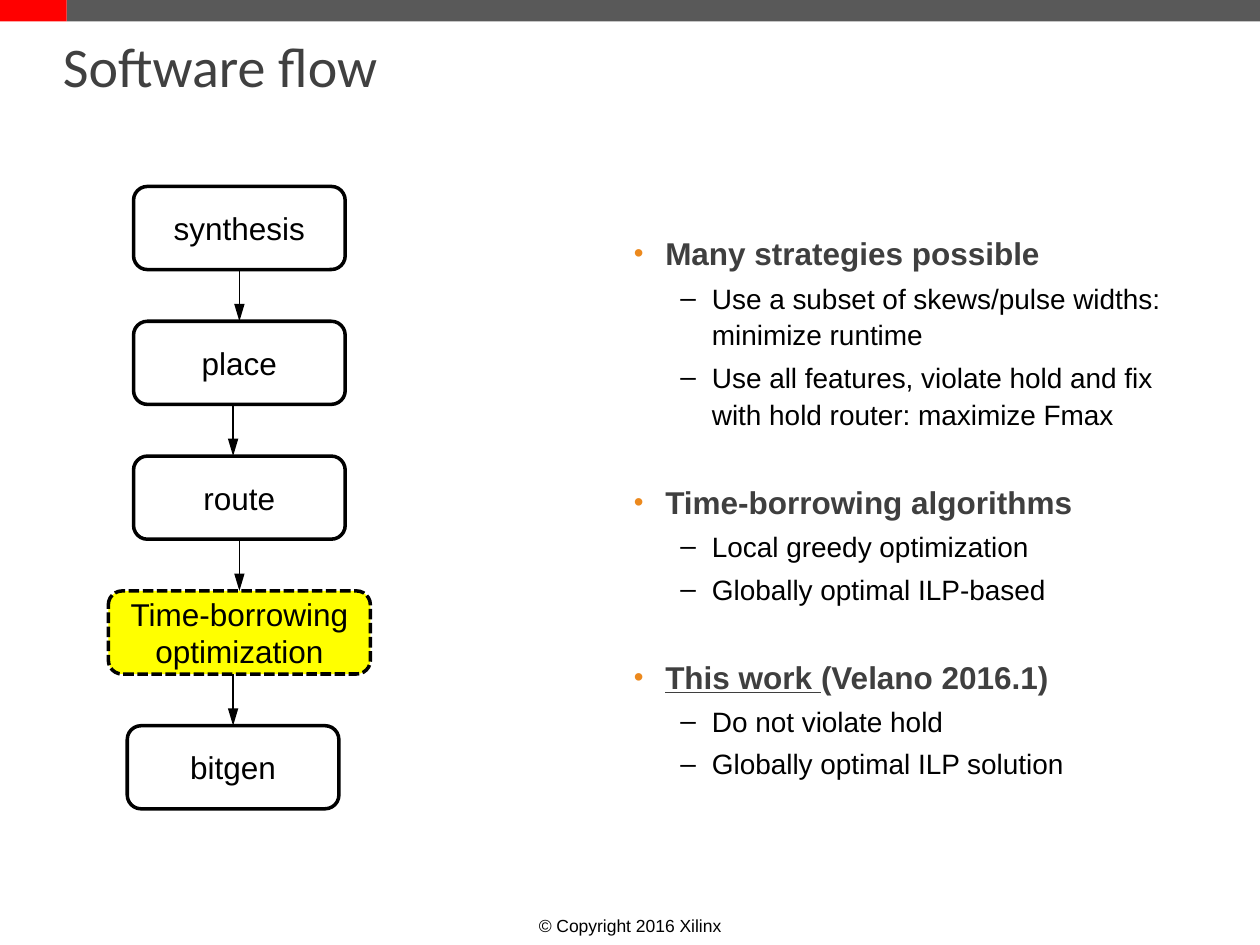
from itertools import pairwise

from lxml import etree
from pptx import Presentation, util as u
from pptx.dml.color import RGBColor
from pptx.enum import dml, shapes, text
from pptx.oxml.ns import qn


class Theme:
    black, white, red = "000000", "FFFFFF", "FF0000"
    bar, title, head = "595959", "404040", "3F3F3F"
    mark, focus = "EC891D", "FFFF00"
    sans, serif = "Arial", "Calibri"
    big, mid, item, small = 32, 18, 16, 10


def rgb(code):
    return RGBColor.from_string(code)


def node(parent, tag, **attrs):
    return etree.SubElement(parent, qn(tag), attrs)


class Deck:
    def __init__(self, theme):
        self.theme = theme
        self.prs = Presentation()
        self.prs.slide_width, self.prs.slide_height = u.Inches(10), u.Inches(7.5)
        self.slide = self.prs.slides.add_slide(self.prs.slide_layouts[6])

    def run(self, para, words, size, color, font=None, bold=False, under=False):
        run = para.add_run()
        run.text = words
        face = run.font
        face.name, face.size = font or self.theme.sans, u.Pt(size)
        face.bold, face.underline = bold, under
        face.color.rgb = rgb(color)

    def frame(self, at, left=0.1, top=0.05):
        box = self.slide.shapes.add_textbox(*map(u.Inches, at))
        frame = box.text_frame
        frame.word_wrap = True
        frame.margin_left, frame.margin_top = u.Inches(left), u.Inches(top)
        return frame

    def shape(self, kind, at, fill):
        shape = self.slide.shapes.add_shape(kind, *map(u.Inches, at))
        shape.shadow.inherit = False
        shape.fill.solid()
        shape.fill.fore_color.rgb = rgb(fill)
        return shape

    def bar(self, at, fill):
        self.shape(shapes.MSO_SHAPE.RECTANGLE, at, fill).line.fill.background()

    def step(self, words, at, focus):
        t = self.theme
        box = self.shape(shapes.MSO_SHAPE.ROUNDED_RECTANGLE, at,
                         t.focus if focus else t.white)
        box.line.color.rgb = rgb(t.black)
        box.line.width = u.Pt(2)
        if focus:
            box.line.dash_style = dml.MSO_LINE.SQUARE_DOT
        frame = box.text_frame
        frame.word_wrap = True
        frame.vertical_anchor = text.MSO_ANCHOR.MIDDLE
        para = frame.paragraphs[0]
        para.alignment = text.PP_ALIGN.CENTER
        self.run(para, words, t.mid, t.black)
        return box

    def arrow(self, top, end, x):
        """Drop an arrow at x, joined wherever x is the middle of a side."""
        x = u.Inches(x)
        line = self.slide.shapes.add_connector(
            shapes.MSO_CONNECTOR.STRAIGHT, x, top.top + top.height, x, end.top)
        line.line.color.rgb = rgb(self.theme.black)
        line.line.width = u.Pt(1)
        for box, site, join in ((top, 2, line.begin_connect),
                                (end, 0, line.end_connect)):
            if abs(box.left + box.width // 2 - x) < u.Inches(0.01):
                join(box, site)
        props = line.line._get_or_add_ln()
        node(props, "a:tailEnd", type="triangle", w="med", len="lg")
        node(line._element.spPr, "a:effectLst")

    def bullet(self, para, sign, color, indent, scale=100):
        props = para._p.get_or_add_pPr()
        props.set("marL", str(u.Inches(indent)))
        props.set("indent", str(u.Inches(-0.25)))
        node(node(props, "a:buClr"), "a:srgbClr", val=color)
        node(props, "a:buSzPct", val=str(scale * 1000))
        node(props, "a:buFont", typeface=self.theme.sans)
        node(props, "a:buChar", char=sign)
        para.line_spacing = 1.1

    def points(self, at, groups):
        t = self.theme
        frame = self.frame(at, left=0, top=0.08)
        for i, (heads, items) in enumerate(groups):
            para = frame.add_paragraph() if i else frame.paragraphs[0]
            self.bullet(para, "•", t.mark, 0.25, 88)
            if i:
                para.space_before = u.Pt(27.5)
            for words, under in heads:
                self.run(para, words, t.mid, t.head, bold=True, under=under)
            for lines in items:
                para = frame.add_paragraph()
                para.level = 1
                self.bullet(para, "–", t.black, 0.62)
                para.space_before = u.Pt(t.item * 0.2)
                for j, words in enumerate(lines):
                    if j:
                        para.add_line_break()
                    self.run(para, words, t.item, t.black)


def main():
    t = Theme
    deck = Deck(t)
    deck.bar((0.53, 0, 9.47, 0.17), t.bar)
    deck.bar((0, 0, 0.53, 0.17), t.red)

    foot = deck.frame((0, 7.21, 10, 0.32)).paragraphs[0]
    foot.alignment = text.PP_ALIGN.CENTER
    deck.run(foot, "© Copyright 2016 Xilinx", t.small, t.black)

    title = deck.frame((0.5, 0.23, 9, 0.58), left=0).paragraphs[0]
    title.line_spacing = 0.98
    deck.run(title, "Software flow", t.big, t.title, t.serif)

    deck.points((5.03, 1.75, 4.49, 4.95), [
        ([("Many strategies possible", False)],
         [["Use a subset of skews/pulse widths: ", "minimize runtime"],
          ["Use all features, violate hold and fix with hold router: "
           "maximize Fmax"]]),
        ([("Time-borrowing algorithms", False)],
         [["Local greedy optimization"], ["Globally optimal ILP-based"]]),
        ([("This work ", True), ("(Velano 2016.1)", False)],
         [["Do not violate hold"], ["Globally optimal ILP solution"]]),
    ])

    flow = [("synthesis", 1.06, 1.68), ("place", 1.06, 1.68),
            ("route", 1.06, 1.68),
            ("Time-borrowing optimization", 0.86, 2.08),
            ("bitgen", 1.01, 1.68)]
    steps = [deck.step(words, (left, 1.48 + 1.07 * i, wide, 0.66), i == 3)
             for i, (words, left, wide) in enumerate(flow)]
    for i, (top, end) in enumerate(pairwise(steps)):
        deck.arrow(top, end, 1.85 if i % 2 else 1.9)

    deck.prs.save("out.pptx")


if __name__ == "__main__":
    main()
